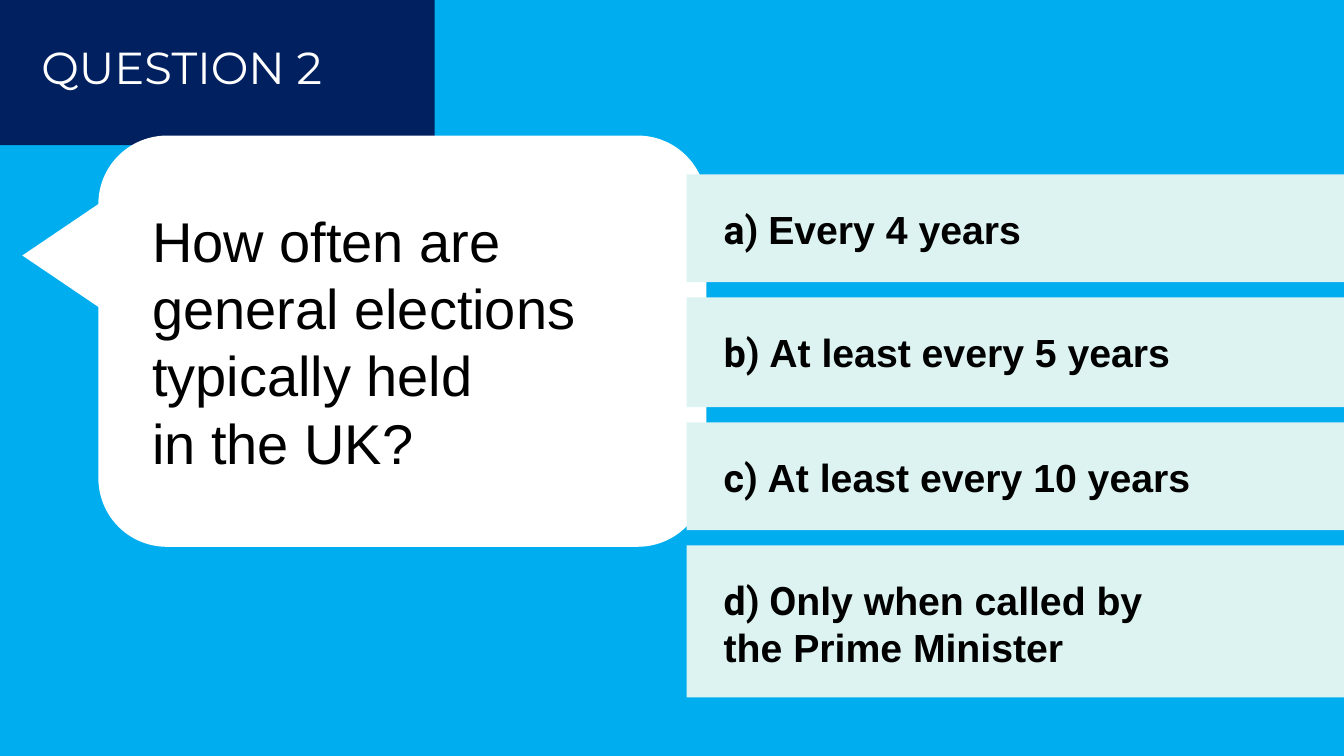
from dataclasses import dataclass

from pptx import Presentation
from pptx.dml.color import RGBColor
from pptx.enum.shapes import MSO_SHAPE
from pptx.enum.text import MSO_ANCHOR, MSO_AUTO_SIZE, PP_ALIGN
from pptx.util import Inches, Pt

RECTANGLE = MSO_SHAPE.RECTANGLE
SPEECH_BUBBLE = MSO_SHAPE.ROUNDED_RECTANGULAR_CALLOUT
LEFT = PP_ALIGN.LEFT
TOP, MIDDLE = MSO_ANCHOR.TOP, MSO_ANCHOR.MIDDLE
NO_AUTOFIT = MSO_AUTO_SIZE.NONE

# Content
HEADING = "QUESTION 2"
QUESTION = ["How often are", "general elections", "typically held", "in the UK?"]
# (label, answer, bar height, text width, text height)
ANSWERS = [
    ("a) ", "Every 4 years", 1.07, 3.64, 0.57),
    ("b) ", "At least every 5 years", 1.09, 5.81, 0.57),
    ("c) ", "At least every 10 years", 1.07, 5.86, 0.57),
    ("d) O", "nly when called by the Prime Minister", 1.51, 4.93, 1.04),
]


@dataclass(frozen=True)
class Theme:
    background: str = "00AEEF"
    header: str = "002060"
    bubble: str = "FFFFFF"
    answer_bar: str = "DDF3F1"
    heading_text: str = "FFFFFF"
    body_text: str = "000000"
    heading_font: str = "Montserrat"
    body_font: str = "Arial"
    label_font: str = "Roboto"
    heading_size: int = 32
    question_size: int = 40
    answer_size: int = 28


THEME = Theme()

# Layout, in inches
SLIDE_WIDTH, SLIDE_HEIGHT = 13.33, 7.5
BAR_LEFT, BAR_WIDTH = 6.81, 6.52
FIRST_BAR_TOP, BAR_GAP = 1.73, 0.15
ANSWER_INDENT, ANSWER_DROP = 0.27, 0.26


def add_block(slide, preset, left, top, width, height, color):
    block = slide.shapes.add_shape(
        preset, Inches(left), Inches(top), Inches(width), Inches(height))
    block.shadow.inherit = False
    block.fill.solid()
    block.fill.fore_color.rgb = RGBColor.from_string(color)
    block.line.fill.background()
    return block


def add_text(slide, left, top, width, height):
    box = slide.shapes.add_textbox(
        Inches(left), Inches(top), Inches(width), Inches(height))
    box.text_frame.word_wrap = True
    box.text_frame.vertical_anchor = TOP
    return box.text_frame.paragraphs[0]


def add_run(paragraph, words, font, size, color, bold=False):
    run = paragraph.add_run()
    run.text = words
    run.font.name = font
    run.font.size = Pt(size)
    run.font.bold = bold
    run.font.color.rgb = RGBColor.from_string(color)


def add_header(slide):
    add_block(slide, RECTANGLE, 0, 0, 4.31, 1.44, THEME.header)
    heading = slide.shapes.title
    slide.shapes.element.append(heading.element)  # bring in front of the header
    heading.left, heading.top = Inches(0.29), Inches(0.32)
    heading.width, heading.height = Inches(4.02), Inches(0.74)
    frame = heading.text_frame
    frame.margin_left = frame.margin_right = Inches(0.12)
    frame.margin_top = frame.margin_bottom = Inches(0.12)
    frame.vertical_anchor = MIDDLE
    frame.auto_size = NO_AUTOFIT
    paragraph = frame.paragraphs[0]
    paragraph.alignment = LEFT
    paragraph.line_spacing = 0.9
    add_run(paragraph, HEADING, THEME.heading_font, THEME.heading_size,
            THEME.heading_text)


def add_question(slide):
    bubble = add_block(slide, SPEECH_BUBBLE, 1.95, 0.37, 4.08, 6.03, THEME.bubble)
    bubble.rotation = 90
    paragraph = add_text(slide, 1.41, 2, 4.8, 2.79)
    for number, line in enumerate(QUESTION):
        if number:
            paragraph.add_line_break()
        add_run(paragraph, line, THEME.body_font, THEME.question_size,
                THEME.body_text)


def add_answers(slide):
    top = FIRST_BAR_TOP
    for label, answer, bar_height, text_width, text_height in ANSWERS:
        add_block(slide, RECTANGLE, BAR_LEFT, top, BAR_WIDTH, bar_height,
                  THEME.answer_bar)
        paragraph = add_text(slide, BAR_LEFT + ANSWER_INDENT, top + ANSWER_DROP,
                             text_width, text_height)
        for words, font in ((label, THEME.label_font), (answer, THEME.body_font)):
            add_run(paragraph, words, font, THEME.answer_size,
                    THEME.body_text, bold=True)
        top += bar_height + BAR_GAP


def main():
    deck = Presentation()
    deck.slide_width, deck.slide_height = Inches(SLIDE_WIDTH), Inches(SLIDE_HEIGHT)
    slide = deck.slides.add_slide(deck.slide_layouts.get_by_name("Title Only"))
    slide.background.fill.solid()
    slide.background.fill.fore_color.rgb = RGBColor.from_string(THEME.background)

    add_header(slide)
    add_question(slide)
    add_answers(slide)
    deck.save("out.pptx")


if __name__ == "__main__":
    main()
